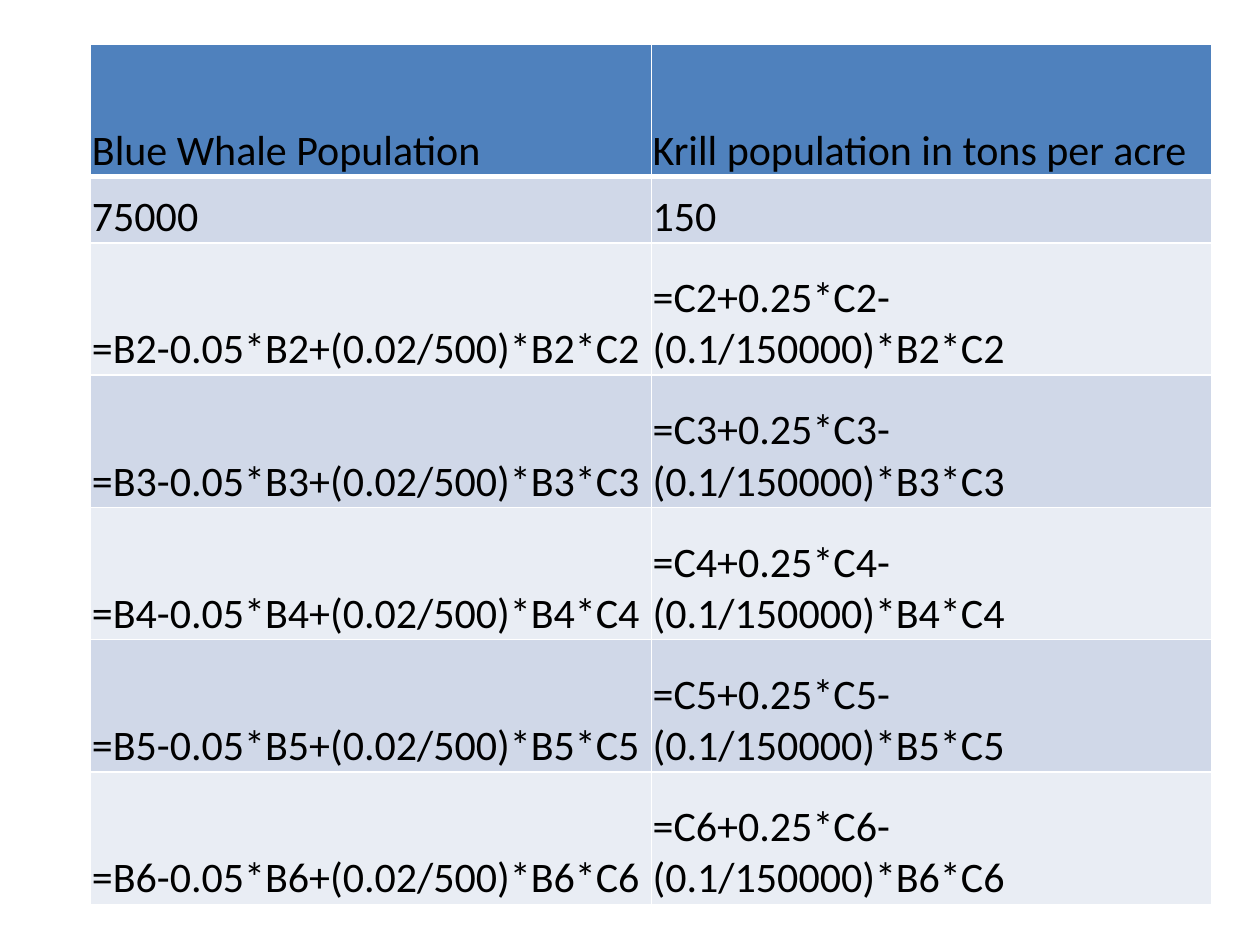
"""Build a slide with a table of whale and krill population formulas."""
from dataclasses import dataclass

from lxml.etree import SubElement as Sub
from pptx import Presentation
from pptx.dml.color import RGBColor as Rgb
from pptx.enum.text import MSO_ANCHOR as Anchor
from pptx.oxml.ns import qn
from pptx.util import Inches, Pt


@dataclass(frozen=True)
class Theme:
    font: str = "Calibri"
    size: int = 24
    ink: str = "000000"
    head: str = "4F81BD"
    bands: tuple = ("D0D8E8", "E9EDF4")
    rule: str = "FFFFFF"
    thin: int = 1
    thick: int = 3


THEME = Theme()
WIDTH, HEIGHT = 10, 7.5
LEFT, TOP = 0.072 * WIDTH, 0.047 * HEIGHT
COL = 0.445 * WIDTH
TALL, SHORT = 0.14 * HEIGHT, 0.07 * HEIGHT
INSET = 0.01


def get_rows():
    """Return the text of each row, header first."""
    steps = [
        (f"=B{n}-0.05*B{n}+(0.02/500)*B{n}*C{n}",
         f"=C{n}+0.25*C{n}-(0.1/150000)*B{n}*C{n}")
        for n in range(2, 7)
    ]
    return [("Blue Whale Population", "Krill population in tons per acre"),
            ("75000", "150"), *steps]


def add_rule(cell, side, width):
    """Draw one border of a cell."""
    line = Sub(cell._tc.get_or_add_tcPr(), qn(f"a:ln{side}"), w=str(Pt(width)))
    fill = Sub(line, qn("a:solidFill"))
    Sub(fill, qn("a:srgbClr"), val=THEME.rule)


def fill_cell(cell, text, row):
    """Write and style one cell according to its row."""
    for side in "LRTB":
        heavy = (row, side) in ((0, "B"), (1, "T"))
        add_rule(cell, side, THEME.thick if heavy else THEME.thin)
    cell.fill.solid()
    shade = THEME.bands[(row - 1) % 2] if row else THEME.head
    cell.fill.fore_color.rgb = Rgb.from_string(shade)
    cell.margin_left = cell.margin_right = cell.margin_top = Inches(INSET)
    cell.margin_bottom = 0
    cell.vertical_anchor = Anchor.BOTTOM
    cell.text = text
    font = cell.text_frame.paragraphs[0].font
    font.name, font.size, font.bold = THEME.font, Pt(THEME.size), False
    font.color.rgb = Rgb.from_string(THEME.ink)


def add_grid(slide, rows):
    """Add the table and fill its cells."""
    highs = [SHORT if row == 1 else TALL for row in range(len(rows))]
    cols = len(rows[0])
    box = [Inches(x) for x in (LEFT, TOP, cols * COL, sum(highs))]
    table = slide.shapes.add_table(len(rows), cols, *box).table
    for row, texts in enumerate(rows):
        table.rows[row].height = Inches(highs[row])
        for col, text in enumerate(texts):
            fill_cell(table.cell(row, col), text, row)


def main():
    """Build and save the slide."""
    deck = Presentation()
    deck.slide_width, deck.slide_height = Inches(WIDTH), Inches(HEIGHT)
    slide = deck.slides.add_slide(deck.slide_layouts[6])
    add_grid(slide, get_rows())
    deck.save("out.pptx")


if __name__ == "__main__":
    main()
